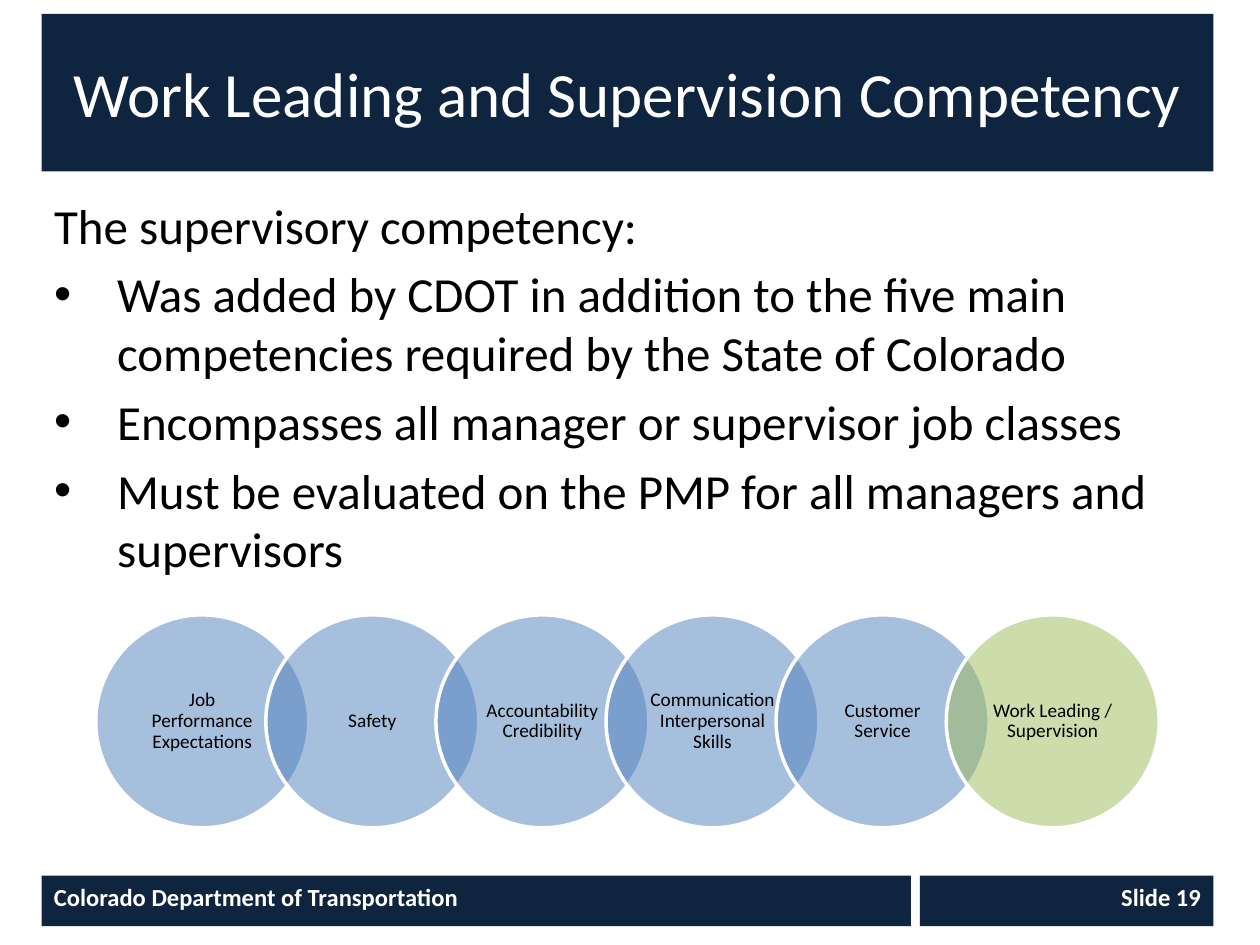
from dataclasses import dataclass

from lxml import etree
from pptx import Presentation
from pptx import util as u
from pptx.dml.color import RGBColor
from pptx.enum import shapes, text
from pptx.oxml import ns

NAVY = RGBColor(0x0F, 0x24, 0x3E)
BLUE = RGBColor(0x4F, 0x81, 0xBD)
GREEN = RGBColor(0x9B, 0xBB, 0x59)
WHITE = RGBColor(0xFF, 0xFF, 0xFF)
BLACK = RGBColor(0, 0, 0)
FONT = "Calibri"

MARGIN = 0.33
CIRCLE_LEFT, CIRCLE_TOP, CIRCLE_SIZE, CIRCLE_STEP = 0.76, 4.88, 1.69, 1.35
LABEL_SIZE = 1.2


@dataclass
class Competency:
    label: str
    color: RGBColor = BLUE


@dataclass
class FooterBar:
    label: str
    left: float
    width: float
    align: text.PP_ALIGN


COMPETENCIES = [
    Competency("Job Performance Expectations"),
    Competency("Safety"),
    Competency("Accountability Credibility"),
    Competency("Communication Interpersonal Skills"),
    Competency("Customer Service"),
    Competency("Work Leading / Supervision", GREEN),
]
FOOTER_BARS = [
    FooterBar("Slide 19", 7.3, 2.33, text.PP_ALIGN.RIGHT),
    FooterBar("Colorado Department of Transportation", MARGIN, 6.9, text.PP_ALIGN.LEFT),
]
INTRO = "The supervisory competency:"
POINTS = [
    "Was added by CDOT in addition to the five main competencies required by the State of Colorado",
    "Encompasses all manager or supervisor job classes",
    "Must be evaluated on the PMP for all managers and supervisors",
]


def place(shape, left: float, top: float, width: float, height: float) -> None:
    shape.left, shape.top = u.Inches(left), u.Inches(top)
    shape.width, shape.height = u.Inches(width), u.Inches(height)


def add_run(paragraph, content: str, size: int, color: RGBColor, bold: bool = False) -> None:
    run = paragraph.add_run()
    run.text = content
    run.font.name, run.font.size, run.font.bold = FONT, u.Pt(size), bold
    run.font.color.rgb = color


def fill_solid(shape, color: RGBColor) -> None:
    shape.fill.solid()
    shape.fill.fore_color.rgb = color


def set_bullet(paragraph, char: str = "") -> None:
    """Hang the paragraph on a bullet, or set it flush left without one."""
    hang = u.Inches(0.5) if char else 0
    props = paragraph._p.get_or_add_pPr()
    props.set("marL", str(hang))
    props.set("indent", str(-hang))
    bullet = etree.SubElement(props, ns.qn("a:buChar" if char else "a:buNone"))
    if char:
        bullet.set("char", char)


def add_title(slide) -> None:
    title = slide.shapes.title
    place(title, MARGIN, 0.11, 9.3, 1.25)
    fill_solid(title, NAVY)
    frame = title.text_frame
    frame.auto_size = text.MSO_AUTO_SIZE.NONE
    frame.vertical_anchor = text.MSO_ANCHOR.MIDDLE
    heading = frame.paragraphs[0]
    heading.alignment = text.PP_ALIGN.CENTER
    add_run(heading, "Work Leading and Supervision Competency", 36, WHITE)


def add_body(slide) -> None:
    body = slide.placeholders[1]
    place(body, MARGIN, 1.5, 9.3, 5.4)
    frame = body.text_frame
    frame.auto_size = text.MSO_AUTO_SIZE.NONE
    intro = frame.paragraphs[0]
    set_bullet(intro)
    add_run(intro, INTRO, 28, BLACK)
    for point in POINTS:
        item = frame.add_paragraph()
        set_bullet(item, "•")
        add_run(item, point, 28, BLACK)


def add_footer_bar(slide, bar: FooterBar) -> None:
    box = slide.shapes.add_shape(
        shapes.MSO_SHAPE.RECTANGLE,
        u.Inches(bar.left), u.Inches(6.95), u.Inches(bar.width), u.Inches(0.4))
    box.shadow.inherit = False
    fill_solid(box, NAVY)
    box.line.fill.background()
    box.text_frame.vertical_anchor = text.MSO_ANCHOR.TOP
    caption = box.text_frame.paragraphs[0]
    caption.alignment = bar.align
    add_run(caption, bar.label, 14, WHITE, bold=True)


def add_competency(slide, competency: Competency, left: float) -> None:
    # Half-transparent circle
    circle = slide.shapes.add_shape(
        shapes.MSO_SHAPE.OVAL,
        u.Inches(left), u.Inches(CIRCLE_TOP), u.Inches(CIRCLE_SIZE), u.Inches(CIRCLE_SIZE))
    circle.shadow.inherit = False
    fill_solid(circle, competency.color)
    color = circle.fill._xPr.find(ns.qn("a:solidFill"))[0]
    etree.SubElement(color, ns.qn("a:alpha")).set("val", "50000")
    circle.line.color.rgb = WHITE
    circle.line.width = u.Pt(2)

    # Label centred in the circle
    inset = (CIRCLE_SIZE - LABEL_SIZE) / 2
    label = slide.shapes.add_textbox(
        u.Inches(left + inset), u.Inches(CIRCLE_TOP + inset),
        u.Inches(LABEL_SIZE), u.Inches(LABEL_SIZE))
    frame = label.text_frame
    frame.word_wrap = True
    frame.vertical_anchor = text.MSO_ANCHOR.MIDDLE
    frame.margin_left = frame.margin_right = u.Inches(0.09)
    frame.margin_top = frame.margin_bottom = u.Inches(0.02)
    caption = frame.paragraphs[0]
    caption.alignment = text.PP_ALIGN.CENTER
    caption.line_spacing = 0.9
    add_run(caption, competency.label, 11, BLACK)


def main() -> None:
    deck = Presentation()
    deck.slide_width, deck.slide_height = u.Inches(10), u.Inches(7.5)
    slide = deck.slides.add_slide(deck.slide_layouts[1])
    add_title(slide)
    add_body(slide)
    for bar in FOOTER_BARS:
        add_footer_bar(slide, bar)
    for index, competency in enumerate(COMPETENCIES):
        add_competency(slide, competency, CIRCLE_LEFT + index * CIRCLE_STEP)
    deck.save("out.pptx")


if __name__ == "__main__":
    main()
